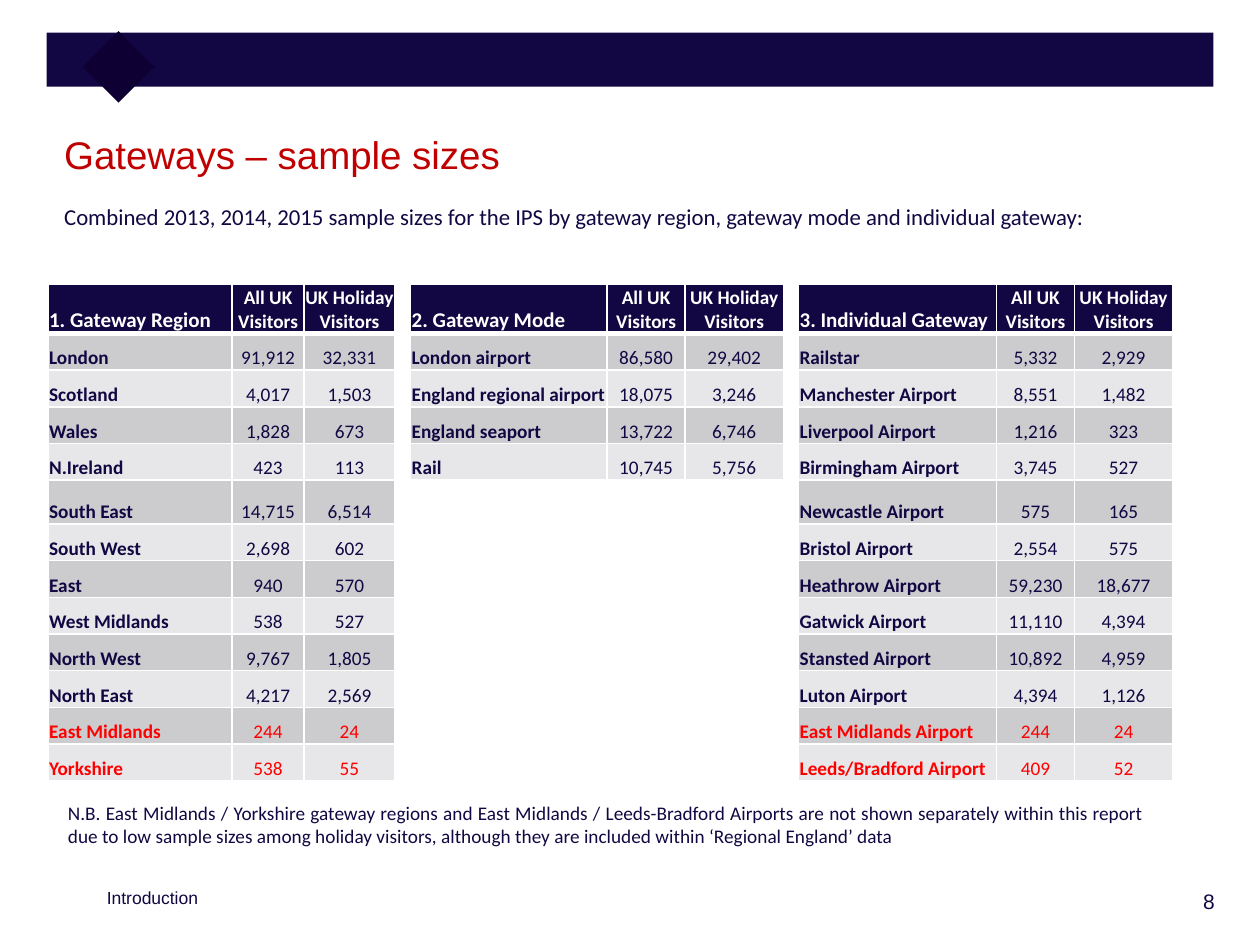
from lxml import etree
from pptx import Presentation
from pptx.dml.color import RGBColor
from pptx.enum import shapes, text
from pptx.oxml import ns
from pptx.util import Cm, Pt

NAVY, RED, TITLE_RED, WHITE = "120742", "FF0000", "C00000", "FFFFFF"
BANDS = "CCCCCF", "E7E7E9"
HEADER_H, ROW_H, TALL_ROW_H = 0.98, 0.74, 0.88
TALL_ROW = 5
LEFT, RIGHT = text.PP_ALIGN.LEFT, text.PP_ALIGN.RIGHT
CENTER, JUSTIFY = text.PP_ALIGN.CENTER, text.PP_ALIGN.JUSTIFY


def rgb(value):
    return RGBColor.from_string(value)


def write(tf, words, size, font, color, align=LEFT, bold=False):
    """Fill a text frame with one unbulleted paragraph."""
    tf.text = words
    p = tf.paragraphs[0]
    p.alignment = align
    p.space_before = Pt(0)
    pPr = p._p.get_or_add_pPr()
    pPr.set("marL", "0")
    pPr.set("indent", "0")
    etree.SubElement(pPr, ns.qn("a:buNone"))
    for r in p.runs:
        r.font.size = Pt(size)
        r.font.name = font
        r.font.bold = bold
        r.font.color.rgb = rgb(color)


prs = Presentation()
prs.slide_width, prs.slide_height = Cm(25.4), Cm(19.05)
s = prs.slides.add_slide(prs.slide_layouts.get_by_name("Two Content"))

# Header band with its diamond
for box, color, rotation in [
    ((0.94, 0.66, 23.52, 1.09), NAVY, 0),
    ((1.88, 0.84, 1.02, 1.02), "0E0033", 45),
]:
    sp = s.shapes.add_shape(shapes.MSO_SHAPE.RECTANGLE, *map(Cm, box))
    sp.rotation = rotation
    sp.shadow.inherit = False
    sp.fill.solid()
    sp.fill.fore_color.rgb = rgb(color)
    sp.line.fill.background()

# Title, introduction, footer, note and page number
title, intro, footer = s.placeholders
note, page = (s.shapes.add_textbox(0, 0, Cm(1), Cm(1)) for _ in range(2))
for sp, box, words, size, font, color, align in [
    (title, (1.04, 2.41, 23.39, 1.55), "Gateways – sample sizes",
     22, "Arial", TITLE_RED, LEFT),
    (intro, (1.04, 3.96, 23.39, 13.39),
     "Combined 2013, 2014, 2015 sample sizes for the IPS by gateway region, "
     "gateway mode and individual gateway:", 13, "Calibri", NAVY, JUSTIFY),
    (footer, (1.9, 17.75, 6.78, 0.76), "Introduction",
     10, "Arial", NAVY, LEFT),
    (note, (1.12, 16.03, 22.2, 1.19),
     "N.B. East Midlands / Yorkshire gateway regions and East Midlands / "
     "Leeds-Bradford Airports are not shown separately within this report "
     "due to low sample sizes among holiday visitors, although they are "
     "included within ‘Regional England’ data", 11, "Calibri", NAVY, JUSTIFY),
    (page, (21.67, 17.78, 3.07, 0.91), "8", 12, "Arial", NAVY, RIGHT),
]:
    sp.left, sp.top, sp.width, sp.height = map(Cm, box)
    tf = sp.text_frame
    tf.word_wrap = True
    tf.auto_size = text.MSO_AUTO_SIZE.NONE
    tf.vertical_anchor = text.MSO_ANCHOR.TOP
    write(tf, words, size, font, color, align)
title.text_frame.margin_top = Cm(0.23)

# Sample-size tables: left edge, column widths, heading, rows
tables = [
    (0.97, (3.71, 1.45, 1.83), "1. Gateway Region", [
        ("London", "91,912", "32,331"),
        ("Scotland", "4,017", "1,503"),
        ("Wales", "1,828", "673"),
        ("N.Ireland", "423", "113"),
        ("South East", "14,715", "6,514"),
        ("South West", "2,698", "602"),
        ("East", "940", "570"),
        ("West Midlands", "538", "527"),
        ("North West", "9,767", "1,805"),
        ("North East", "4,217", "2,569"),
        ("East Midlands", "244", "24"),
        ("Yorkshire", "538", "55"),
    ]),
    (8.28, (3.96, 1.57, 1.98), "2. Gateway Mode", [
        ("London airport", "86,580", "29,402"),
        ("England regional airport", "18,075", "3,246"),
        ("England seaport", "13,722", "6,746"),
        ("Rail", "10,745", "5,756"),
    ]),
    (16.1, (3.99, 1.57, 1.98), "3. Individual Gateway", [
        ("Railstar", "5,332", "2,929"),
        ("Manchester Airport", "8,551", "1,482"),
        ("Liverpool Airport", "1,216", "323"),
        ("Birmingham Airport", "3,745", "527"),
        ("Newcastle Airport", "575", "165"),
        ("Bristol Airport", "2,554", "575"),
        ("Heathrow Airport", "59,230", "18,677"),
        ("Gatwick Airport", "11,110", "4,394"),
        ("Stansted Airport", "10,892", "4,959"),
        ("Luton Airport", "4,394", "1,126"),
        ("East Midlands Airport", "244", "24"),
        ("Leeds/Bradford Airport", "409", "52"),
    ]),
]
low_samples = {"East Midlands", "Yorkshire",
               "East Midlands Airport", "Leeds/Bradford Airport"}

for left, widths, heading, body in tables:
    rows = [(heading, "All UK Visitors", "UK Holiday Visitors"), *body]
    heights = [HEADER_H] + [ROW_H] * len(body)
    if len(rows) > TALL_ROW:
        heights[TALL_ROW] = TALL_ROW_H
    table = s.shapes.add_table(len(rows), 3, Cm(left), Cm(5.74),
                               Cm(sum(widths)), Cm(sum(heights))).table
    for column, width in zip(table.columns, widths):
        column.width = Cm(width)
    for i, (row, height) in enumerate(zip(rows, heights)):
        table.rows[i].height = Cm(height)
        header = i == 0
        color = WHITE if header else RED if row[0] in low_samples else NAVY
        for j, words in enumerate(row):
            cell = table.cell(i, j)
            cell.vertical_anchor = text.MSO_ANCHOR.BOTTOM
            cell.margin_left = cell.margin_right = cell.margin_top = Cm(0.02)
            cell.margin_bottom = 0
            cell.fill.solid()
            cell.fill.fore_color.rgb = rgb(NAVY if header else BANDS[(i - 1) % 2])
            write(cell.text_frame, words, 12 if header and j == 0 else 11,
                  "Calibri", color, CENTER if j else LEFT, header or j == 0)
            tcPr = cell._tc.get_or_add_tcPr()
            for k, side in enumerate("LRTB"):
                thick = (header and side == "B") or (i == 1 and side == "T")
                ln = etree.Element(ns.qn(f"a:ln{side}"), w=str(Pt(3 if thick else 1)))
                fill = etree.SubElement(ln, ns.qn("a:solidFill"))
                etree.SubElement(fill, ns.qn("a:srgbClr"), val=WHITE)
                tcPr.insert(k, ln)

prs.save("out.pptx")
